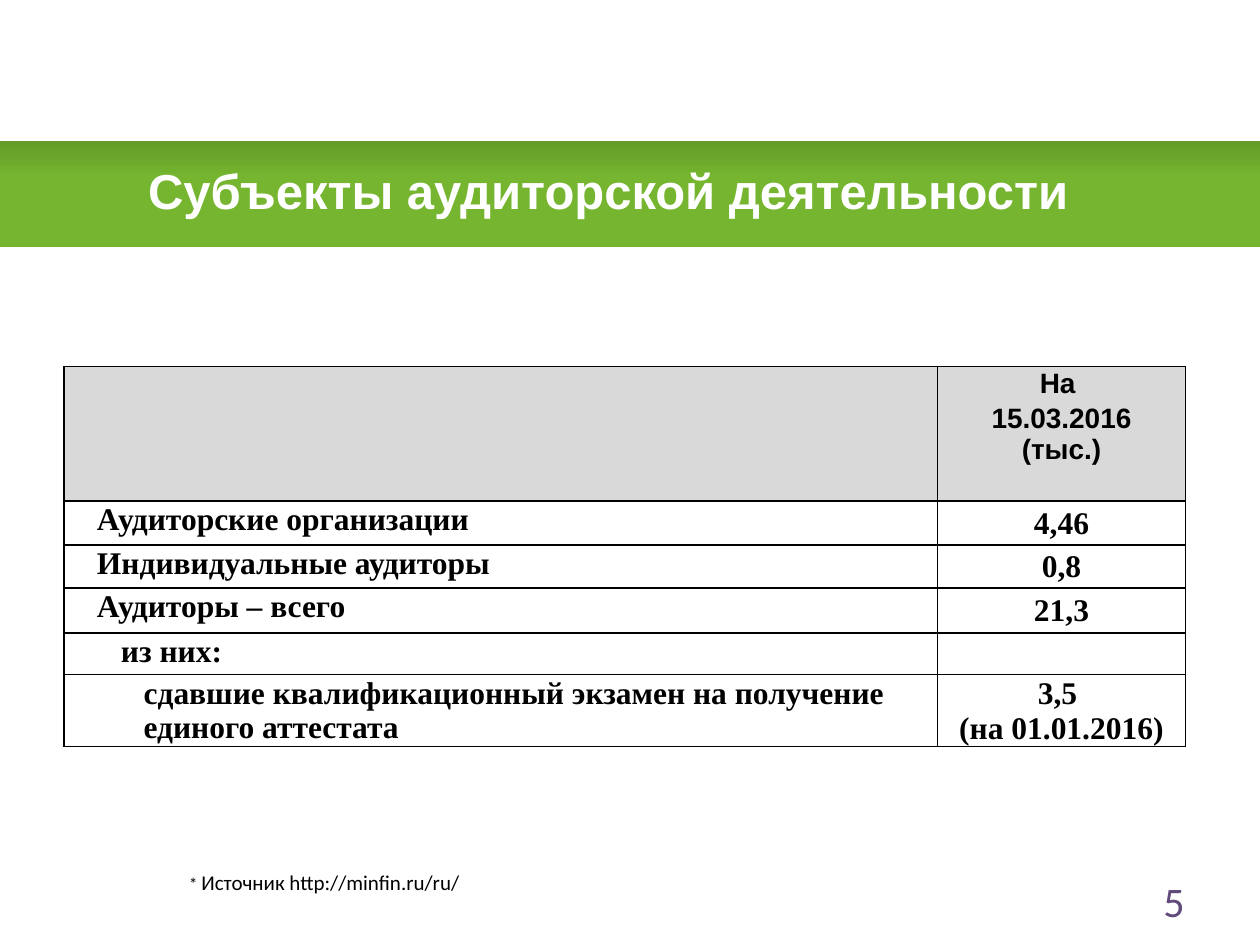
"""Build the slide on audit market participants with its summary table."""
from dataclasses import dataclass

from lxml.etree import SubElement
from pptx import Presentation
from pptx.dml.color import RGBColor
from pptx.enum.shapes import MSO_SHAPE
from pptx.enum.text import MSO_ANCHOR, PP_ALIGN
from pptx.oxml.ns import qn
from pptx.util import Inches, Pt


@dataclass
class Theme:
    green_dark: str = "649B28"
    green: str = "75B52F"
    white: str = "FFFFFF"
    black: str = "000000"
    gray: str = "D9D9D9"
    purple: str = "604A7B"
    title: int = 28
    head: int = 16
    body: int = 18
    mark: int = 10
    note: int = 12
    number: int = 24
    sans: str = "Arial"
    serif: str = "Times New Roman"
    plain: str = "Calibri"


theme = Theme()


def add_run(p, text, size, font, color, bold=False):
    r = p.add_run()
    r.text = text
    r.font.size = Pt(size)
    r.font.name = font
    r.font.bold = bold
    r.font.color.rgb = RGBColor.from_string(color)


def add_border(cell, side, visible):
    ln = SubElement(cell._tc.get_or_add_tcPr(), qn(f"a:ln{side}"), w=str(Pt(1)))
    if visible:
        fill = SubElement(ln, qn("a:solidFill"))
        SubElement(fill, qn("a:srgbClr"), val=theme.black)
    else:
        SubElement(ln, qn("a:noFill"))


prs = Presentation()
prs.slide_width, prs.slide_height = Inches(10), Inches(7.5)
s = prs.slides.add_slide(prs.slide_layouts[5])

band = s.shapes.add_shape(MSO_SHAPE.RECTANGLE, 0, Inches(1.12), Inches(10), Inches(0.84))
band.shadow.inherit = False
band.line.fill.background()
band.fill.gradient()
band.fill.gradient_angle = 270
for stop, color, position in zip(band.fill.gradient_stops, (theme.green_dark, theme.green), (0, 0.34)):
    stop.color.rgb = RGBColor.from_string(color)
    stop.position = position

title = s.shapes.title
band.element.addnext(title.element)
title.left, title.top, title.width, title.height = Inches(0.38), Inches(1.16), Inches(9), Inches(0.7)
tf = title.text_frame
tf.word_wrap = True
tf.vertical_anchor = MSO_ANCHOR.MIDDLE
p = tf.paragraphs[0]
p.alignment = PP_ALIGN.CENTER
add_run(p, "Субъекты аудиторской деятельности ", theme.title, theme.sans, theme.white, True)

widths = [6.93, 1.97]
heights = [0.28, 0.5, 0.27, 0.35, 0.34, 0.36, 0.33, 0.57]
header_rows = 3
rows = [
    ([], ["На "]),
    ([], ["15.03.2016", "(тыс.)"]),
    ([], []),
    (["Аудиторские организации"], ["4,46"]),
    (["Индивидуальные аудиторы"], ["0,8"]),
    (["Аудиторы – всего"], ["21,3"]),
    (["из них:"], []),
    (["сдавшие квалификационный экзамен на получение", "единого аттестата"], ["3,5 ", "(на 01.01.2016)"]),
]
indents = {6: 0.45, 7: 0.63}

table = s.shapes.add_table(
    len(rows), len(widths), Inches(0.51), Inches(2.91), Inches(sum(widths)), Inches(sum(heights))
).table
table.first_row = table.horz_banding = False
for column, width in zip(table.columns, widths):
    column.width = Inches(width)
for row, height in zip(table.rows, heights):
    row.height = Inches(height)
table.cell(0, 0).merge(table.cell(header_rows - 1, 0))

for i, row in enumerate(rows):
    header = i < header_rows
    for j, lines in enumerate(row):
        cell = table.cell(i, j)
        cell.margin_left = Inches(0.01 if header or j else indents.get(i, 0.26))
        cell.margin_right = cell.margin_top = Inches(0.01)
        cell.margin_bottom = 0
        cell.vertical_anchor = MSO_ANCHOR.MIDDLE if j and not header else MSO_ANCHOR.TOP
        top = not header or i == 0 
        bottom = not header or i == header_rows - 1
        for side, visible in (("L", True), ("R", True), ("T", top), ("B", bottom or j == 0)):
            add_border(cell, side, visible)
        cell.fill.solid()
        cell.fill.fore_color.rgb = RGBColor.from_string(theme.gray if header else theme.white)
        tf = cell.text_frame
        size, font = (theme.head, theme.sans) if header else (theme.body, theme.serif)
        if not lines:
            SubElement(tf.paragraphs[0]._p, qn("a:endParaRPr"), sz=str(size * 100))
        for n, line in enumerate(lines):
            p = tf.add_paragraph() if n else tf.paragraphs[0]
            p.alignment = PP_ALIGN.CENTER if j else PP_ALIGN.LEFT
            add_run(p, line, size, font, theme.black, True)

source = s.shapes.add_textbox(Inches(1.4), Inches(6.85), Inches(5.99), Inches(0.3))
tf = source.text_frame
tf.word_wrap = True
p = tf.paragraphs[0]
add_run(p, "* ", theme.mark, theme.plain, theme.black)
add_run(p, "Источник http://minfin.ru/ru/", theme.note, theme.plain, theme.black)

number = s.shapes.add_textbox(Inches(7.17), Inches(6.95), Inches(2.33), Inches(0.4))
tf = number.text_frame
tf.word_wrap = True
tf.vertical_anchor = MSO_ANCHOR.MIDDLE
p = tf.paragraphs[0]
p.alignment = PP_ALIGN.RIGHT
add_run(p, "5", theme.number, theme.plain, theme.purple)

prs.save("out.pptx")
